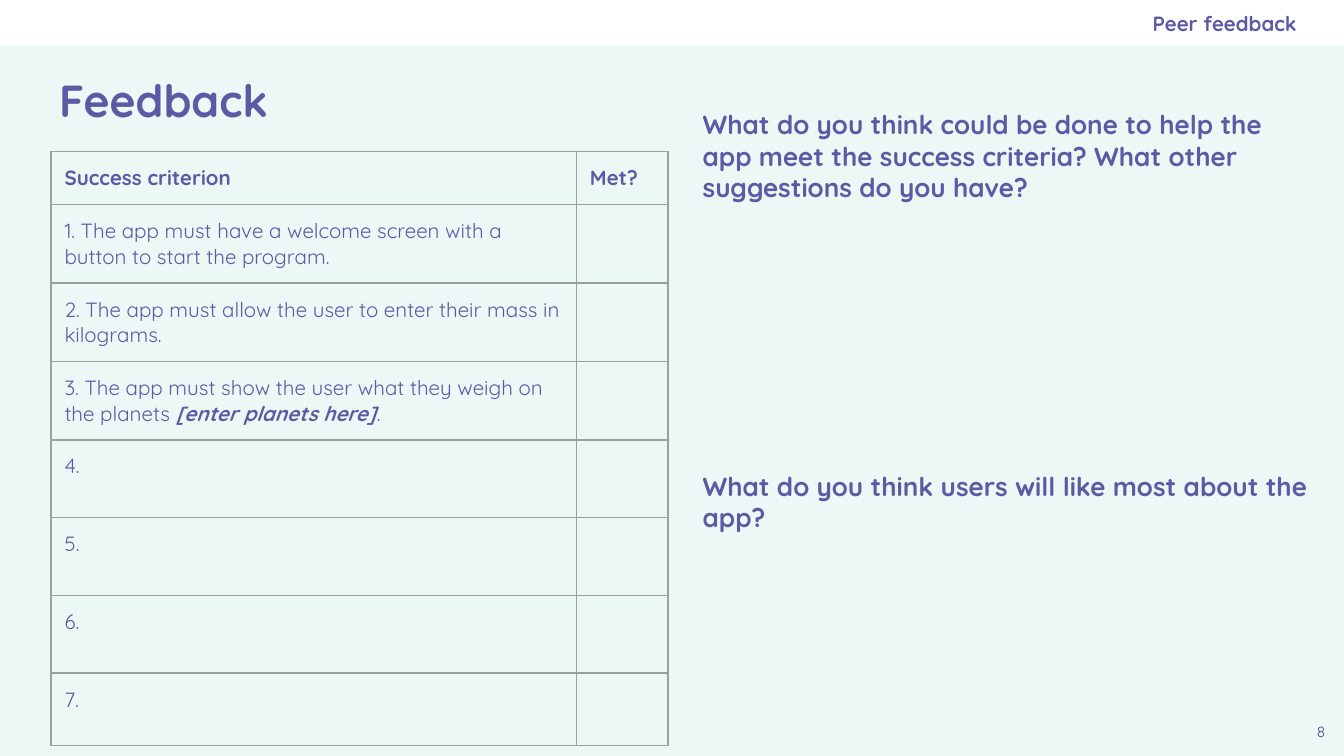
import lxml.etree
import pptx
import pptx.dml.color
import pptx.enum.shapes
import pptx.enum.text
import pptx.oxml.ns
import pptx.util

Inches = pptx.util.Inches
Pt = pptx.util.Pt
ALIGN = pptx.enum.text.PP_ALIGN
ANCHOR = pptx.enum.text.MSO_ANCHOR

FONT = "Quicksand"
COLORS = {
    "background": "ECF8F5",
    "banner": "FFFFFF",
    "text": "5B5BA5",
    "page": "494985",
    "border": "9E9E9E",
}
MARGIN = 0.1
COLUMN_WIDTHS = [3.91, 0.68]
TABLE_HEIGHT = 4.38
HEADER_HEIGHT = 0.37
LAST_HEIGHT = 0.54
MIDDLE_HEIGHT = (TABLE_HEIGHT - HEADER_HEIGHT - LAST_HEIGHT) / 6
ROW_HEIGHTS = [HEADER_HEIGHT] + [MIDDLE_HEIGHT] * 6 + [LAST_HEIGHT]
HEADINGS = ["Success criterion", "Met?"]
CRITERIA = [
    [("1. The app must have a welcome screen with a button to start the program.", False, False)],
    [("2. The app must allow the user to enter their mass in kilograms.", False, False)],
    [
        ("3. The app must show the user what they weigh on the planets ", False, False),
        ("[enter planets here]", True, True),
        (".", False, True),
    ],
] + [[(f"{number}.", False, False)] for number in range(4, 8)]
QUESTIONS = [
    (
        "What do you think could be done to help the app meet the success criteria? "
        "What other suggestions do you have?",
        (5.13, 0.71, 4.78, 0.54),
    ),
    ("What do you think users will like most about the app?", (5.13, 3.4, 4.87, 0.38)),
]


def rgb(name):
    return pptx.dml.color.RGBColor.from_string(COLORS[name])


def style_font(font, size, bold=False, italic=False, color="text"):
    font.name = FONT
    font.size = Pt(size)
    font.bold = bold
    font.italic = italic
    font.color.rgb = rgb(color)


def fill_frame(frame, text, size, bold=True, color="text", align=ALIGN.LEFT,
               anchor=ANCHOR.TOP, right_margin=MARGIN):
    frame.text = text
    frame.word_wrap = True
    frame.auto_size = pptx.enum.text.MSO_AUTO_SIZE.NONE
    frame.vertical_anchor = anchor
    frame.margin_left = frame.margin_top = frame.margin_bottom = Inches(MARGIN)
    frame.margin_right = Inches(right_margin)
    paragraph = frame.paragraphs[0]
    paragraph.alignment = align
    style_font(paragraph.runs[0].font, size, bold, color=color)


def add_text(slide, box, text, size, **options):
    label = slide.shapes.add_textbox(*map(Inches, box))
    fill_frame(label.text_frame, text, size, **options)


def add_banner(slide):
    banner = slide.shapes.add_shape(
        pptx.enum.shapes.MSO_SHAPE.RECTANGLE, 0, 0, Inches(10), Inches(0.34))
    banner.shadow.inherit = False
    banner.fill.solid()
    banner.fill.fore_color.rgb = rgb("banner")
    banner.line.fill.background()


def add_title(slide, text):
    title = slide.shapes.title
    title.left, title.top, title.width, title.height = map(Inches, (0.34, 0.35, 9.32, 0.78))
    fill_frame(title.text_frame, text, 24, anchor=ANCHOR.MIDDLE)


def outline_cell(cell):
    qn = pptx.oxml.ns.qn
    properties = cell._tc.get_or_add_tcPr()
    for side in ("lnL", "lnR", "lnT", "lnB"):
        line = lxml.etree.SubElement(properties, qn(f"a:{side}"), w=str(Pt(0.75)))
        solid = lxml.etree.SubElement(line, qn("a:solidFill"))
        lxml.etree.SubElement(solid, qn("a:srgbClr"), val=COLORS["border"])


def fill_cell(cell, pieces):
    outline_cell(cell)
    cell.fill.background()
    cell.margin_left = cell.margin_right = Inches(MARGIN)
    cell.margin_top = cell.margin_bottom = Inches(MARGIN)
    paragraph = cell.text_frame.paragraphs[0]
    style_font(paragraph.font, 11)
    for text, bold, italic in pieces:
        run = paragraph.add_run()
        run.text = text
        style_font(run.font, 11, bold, italic)


def add_criteria_table(slide):
    criteria = slide.shapes.add_table(
        len(ROW_HEIGHTS), len(COLUMN_WIDTHS), Inches(0.38), Inches(1.13),
        Inches(sum(COLUMN_WIDTHS)), Inches(TABLE_HEIGHT)).table
    criteria.first_row = False
    criteria.horz_banding = False
    for column, width in zip(criteria.columns, COLUMN_WIDTHS):
        column.width = Inches(width)
    header = [[(heading, True, False)] for heading in HEADINGS]
    contents = [header] + [[pieces, []] for pieces in CRITERIA]
    for row, height, row_contents in zip(criteria.rows, ROW_HEIGHTS, contents):
        row.height = Inches(height)
        for cell, pieces in zip(row.cells, row_contents):
            fill_cell(cell, pieces)


def main():
    deck = pptx.Presentation()
    deck.slide_width = Inches(10)
    deck.slide_height = Inches(10) * 9 // 16
    slide = deck.slides.add_slide(deck.slide_layouts.get_by_name("Title Only"))
    slide.background.fill.solid()
    slide.background.fill.fore_color.rgb = rgb("background")
    add_banner(slide)
    add_title(slide, "Feedback")
    add_text(slide, (9.66, 5.28, 0.34, 0.34), "8", 8,
             bold=False, color="page", align=ALIGN.CENTER)
    add_text(slide, (5.75, 0, 3.9, 0.34), "Peer feedback", 11,
             align=ALIGN.RIGHT, anchor=ANCHOR.MIDDLE, right_margin=0)
    add_criteria_table(slide)
    for question, box in QUESTIONS:
        add_text(slide, box, question, 14)
    deck.save("out.pptx")


if __name__ == "__main__":
    main()
